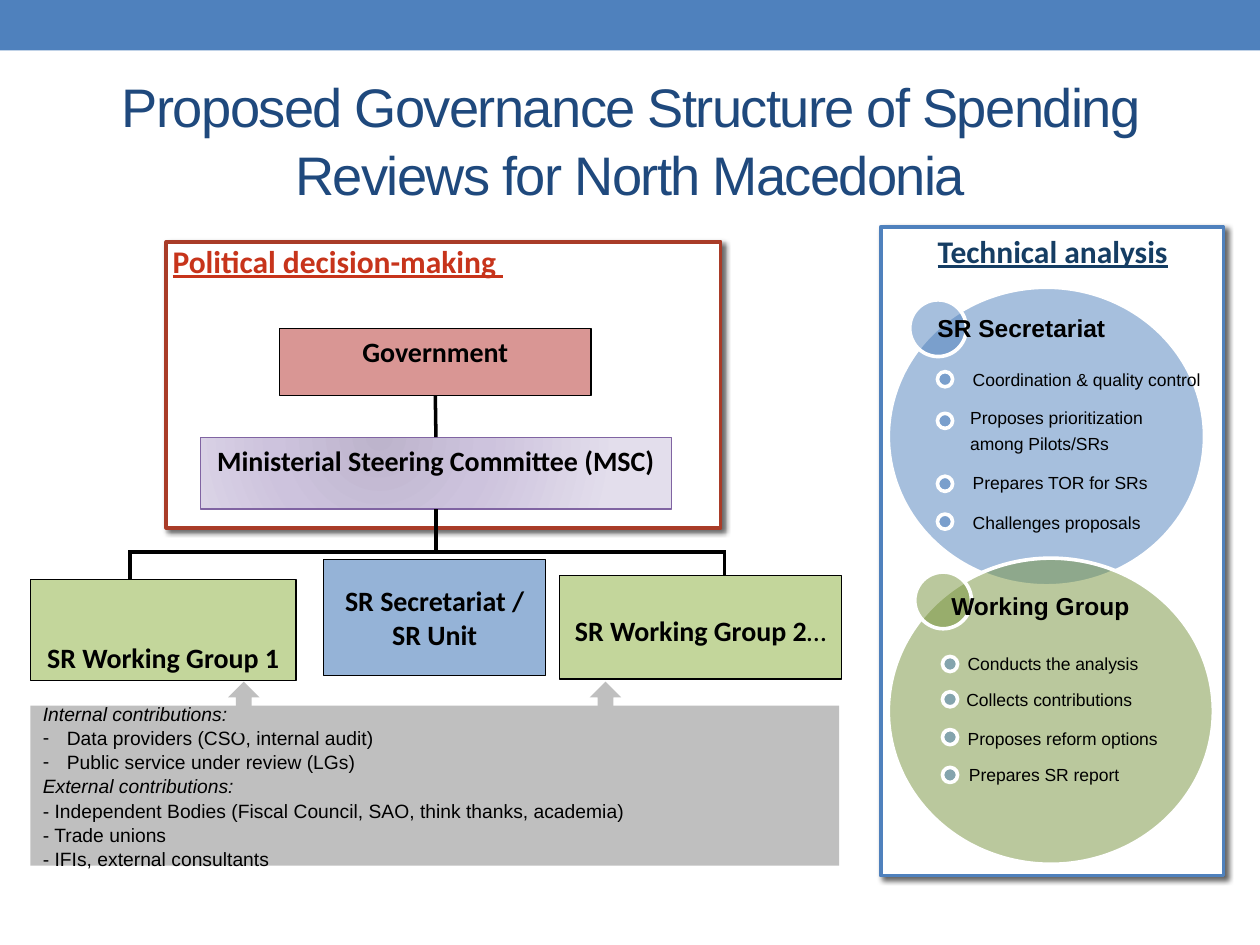
from lxml import etree
from pptx import Presentation
from pptx import util as u
from pptx.dml.color import RGBColor
from pptx.enum import shapes, text
from pptx.oxml import parse_xml
from pptx.oxml.ns import nsdecls, qn

THEME = {
    "blue": "4F81BD", "title": "1F497D", "white": "FFFFFF", "black": "000000",
    "red": "A93C28", "red_text": "C7341B", "navy": "153D63", "rose": "D99694",
    "sky": "95B3D7", "purple": "8064A2", "lime": "C3D69B", "olive": "77933C",
    "grey": "BFBFBF", "mist": ["BDB4CC", "CDC3DD", "E3DEEC"],
    "title_size": 31, "heading_size": 18, "box_size": 16,
    "circle_size": 14, "list_size": 11, "item_size": 10,
    "sans": "Arial", "label": "Calibri",
}
SHAPE, ANCHOR, ALIGN = shapes.MSO_SHAPE, text.MSO_ANCHOR, text.PP_ALIGN

prs = Presentation()
prs.slide_width, prs.slide_height = u.Inches(10), u.Inches(7.5)
slide = prs.slides.add_slide(prs.slide_layouts[1])


def add_box(kind, at, fill=None, line=None, width=0.75, alpha=None, shadow=False):
    """Add a preset shape with flat fill, optional outline, alpha and drop shadow."""
    box = slide.shapes.add_shape(kind, *map(u.Inches, at))
    box.shadow.inherit = False
    if fill:
        box.fill.solid()
        box.fill.fore_color.rgb = RGBColor.from_string(THEME[fill])
    if alpha:
        color = box.fill._xPr.find(".//" + qn("a:srgbClr"))
        etree.SubElement(color, qn("a:alpha"), val=str(alpha * 1000))
    if line:
        box.line.color.rgb = RGBColor.from_string(THEME[line])
        box.line.width = u.Pt(width)
    else:
        box.line.fill.background()
    if shadow:
        effects = box._element.spPr.find(qn("a:effectLst"))
        effects.append(parse_xml(
            f'<a:outerShdw {nsdecls("a")} blurRad="38100" dist="25400" dir="2700000">'
            '<a:srgbClr val="000000"><a:alpha val="60000"/></a:srgbClr></a:outerShdw>'))
    return box


def write(shape, lines, size, color="black", face="label", align=ALIGN.CENTER,
          anchor=ANCHOR.MIDDLE, inset=0.05, spacing=1.0, before=0, **style):
    """Fill a shape with one paragraph per line in a single format."""
    frame = shape.text_frame
    margins = {f"margin_{side}": u.Inches(inset) for side in ("left", "right", "top", "bottom")}
    layout = {"word_wrap": True, "auto_size": text.MSO_AUTO_SIZE.NONE, "vertical_anchor": anchor}
    for name, value in {**margins, **layout}.items():
        setattr(frame, name, value)
    for i, line in enumerate(lines):
        paragraph = frame.paragraphs[0] if i == 0 else frame.add_paragraph()
        paragraph.alignment, paragraph.line_spacing = align, spacing
        paragraph.space_before = u.Pt(before if i else 0)
        run = paragraph.add_run()
        run.text = line
        run.font.color.rgb = RGBColor.from_string(THEME[color])
        for name, value in {"size": u.Pt(THEME[size]), "name": THEME[face], **style}.items():
            setattr(run.font, name, value)
    return frame


# Header bar and title
add_box(SHAPE.RECTANGLE, (0, 0, 10, 0.4), "blue")
title, contributions = slide.placeholders
for holder, at in ((title, (0.5, 0.56, 9, 1.08)), (contributions, (0.24, 5.6, 6.42, 1.27))):
    holder.left, holder.top, holder.width, holder.height = map(u.Inches, at)
heading = write(title, ["Proposed Governance Structure of Spending Reviews for North Macedonia"],
                "title_size", "title", "sans", spacing=1.04)
heading.paragraphs[0].runs[0].font._element.set("spc", "-90")

# Contributions list: (line, italic, bulleted)
sources = [
    ("Internal contributions:", True, False),
    ("Data providers (CSO, internal audit)", False, True),
    ("Public service under review (LGs)", False, True),
    ("External contributions:", True, False),
    ("- Independent Bodies (Fiscal Council, SAO, think thanks, academia)", False, False),
    ("- Trade unions", False, False),
    ("- IFIs, external consultants", False, False),
]
contributions.fill.solid()
contributions.fill.fore_color.rgb = RGBColor.from_string(THEME["grey"])
source_list = write(contributions, [line for line, *_ in sources], "list_size",
                    face="sans", align=ALIGN.LEFT, spacing=1.05)
source_list.margin_left = u.Inches(0.1)
for paragraph, (_, italic, bulleted) in zip(source_list.paragraphs, sources):
    indent = u.Inches(0.19) if bulleted else 0
    properties = paragraph._p.get_or_add_pPr()
    properties.set("marL", str(indent))
    properties.set("indent", str(-indent))
    if bulleted:
        etree.SubElement(properties, qn("a:buChar"), char="-")
    else:
        etree.SubElement(properties, qn("a:buNone"))
    paragraph.runs[0].font.italic = italic

# Technical analysis panel
add_box(SHAPE.RECTANGLE, (6.99, 1.8, 2.72, 5.15), "white", "blue", 2.08, shadow=True)
technical = slide.shapes.add_textbox(*map(u.Inches, (7.38, 1.79, 1.95, 0.37)))
write(technical, ["Technical analysis"], "heading_size", "navy",
      anchor=ANCHOR.TOP, bold=True, underline=True)

# Circles: colour, big circle, small circle, name, name position, dot left,
# then items as (dot top, text left, text centre, lines)
circles = [
    ("blue", (7.05, 2.28, 2.51, 2.37), (7.22, 2.38), "SR Secretariat", (7.44, 2.5), 7.44, [
        (2.95, 7.72, 3.02, ["Coordination & quality control"]),
        (3.28, 7.7, 3.43, ["Proposes prioritization", "among Pilots/SRs"]),
        (3.78, 7.72, 3.84, ["Prepares TOR for SRs"]),
        (4.08, 7.72, 4.16, ["Challenges proposals"])]),
    ("olive", (7.05, 4.43, 2.58, 2.43), (7.26, 4.54), "Working Group", (7.55, 4.71), 7.48, [
        (5.21, 7.68, 5.28, ["Conducts the analysis"]),
        (5.49, 7.67, 5.56, ["Collects contributions"]),
        (5.79, 7.68, 5.87, ["Proposes reform options"]),
        (6.09, 7.69, 6.16, ["Prepares SR report"])]),
]
plain = {"face": "sans", "align": ALIGN.LEFT, "inset": 0, "spacing": 0.9, "before": 4}
for color, big, small, name, name_at, dot_left, items in circles:
    for at in (big, (*small, 0.45, 0.45)):
        add_box(SHAPE.OVAL, at, color, "white", 2.08, alpha=50)
    label = slide.shapes.add_textbox(*map(u.Inches, (*name_at, 2, 0.23)))
    write(label, [name], "circle_size", bold=True, **plain)
    for dot_top, left, centre, lines in items:
        add_box(SHAPE.OVAL, (dot_left, dot_top, 0.12, 0.12), "blue", "white", 2.08, alpha=50)
        height = 0.16 if len(lines) == 1 else 0.36
        item = slide.shapes.add_textbox(
            *map(u.Inches, (left, centre - height / 2, 1.95, height)))
        write(item, lines, "item_size", **plain)

# Political decision-making panel
add_box(SHAPE.RECTANGLE, (1.32, 1.92, 4.4, 2.27), "white", "red", 2.08, shadow=True)
political = slide.shapes.add_textbox(*map(u.Inches, (1.32, 1.87, 2.74, 0.36)))
write(political, ["Political decision-making "], "heading_size", "red_text",
      align=ALIGN.LEFT, anchor=ANCHOR.TOP, bold=True, underline=True)

# Governance bodies
bodies = [
    (["Government"], (2.22, 2.61, 2.47, 0.53), "rose", "black", ANCHOR.TOP),
    (["Ministerial Steering Committee (MSC)"], (1.59, 3.47, 3.74, 0.57), None, "purple", ANCHOR.TOP),
    (["SR Secretariat /", "SR Unit"], (2.57, 4.44, 1.76, 0.92), "sky", "black", ANCHOR.MIDDLE),
    (["SR Working Group 1"], (0.24, 4.6, 2.11, 0.8), "lime", "black", ANCHOR.BOTTOM),
    (["SR Working Group 2"], (4.44, 4.57, 2.24, 0.82), "lime", "black", ANCHOR.TOP),
]
boxes = []
for lines, at, fill, line, anchor in bodies:
    box = add_box(SHAPE.RECTANGLE, at, fill, line)
    write(box, lines, "box_size", anchor=anchor, bold=True)
    boxes.append(box)
government, committee, _, _, second_group = boxes

# Lighter second run after the last working group
second_group.text_frame.margin_top = u.Inches(0.3)
dots = second_group.text_frame.paragraphs[0].add_run()
dots.text = "…"
dots.font.size, dots.font.name = u.Pt(THEME["box_size"]), THEME["label"]
dots.font.color.rgb = RGBColor.from_string(THEME["black"])

# Radial gradient of the committee
stops = "".join(f'<a:gs pos="{pos}"><a:srgbClr val="{color}"/></a:gs>'
                for pos, color in zip((0, 45000, 100000), THEME["mist"]))
committee._element.spPr.insert(2, parse_xml(
    f'<a:gradFill {nsdecls("a")} rotWithShape="1"><a:gsLst>{stops}</a:gsLst><a:path path="circle">'
    '<a:fillToRect l="38000" t="-20000" r="62000" b="120000"/></a:path></a:gradFill>'))

# Reporting lines: start, end, box joined at start, box joined at end
links = [
    ((3.46, 3.14), (3.46, 3.47), government, committee),
    ((3.46, 4.04), (3.46, 4.38), committee, None),
    ((1.02, 4.38), (5.76, 4.38), None, None),
    ((1.03, 4.37), (1.03, 4.6), None, None),
    ((5.75, 4.38), (5.75, 4.57), None, None),
]
for start, end, upper, lower in links:
    link = slide.shapes.add_connector(shapes.MSO_CONNECTOR.STRAIGHT, *map(u.Inches, start + end))
    if upper:
        link.begin_connect(upper, 2)
    if lower:
        link.end_connect(lower, 0)
    link.line.color.rgb = RGBColor.from_string(THEME["black"])
    link.line.width = u.Pt(2)
    etree.SubElement(link._element.spPr, qn("a:effectLst"))

# Arrows from the contributions to the working groups
for left in (1.81, 4.68):
    add_box(SHAPE.UP_ARROW, (left, 5.41, 0.25, 0.41), "grey")

prs.save("out.pptx")
